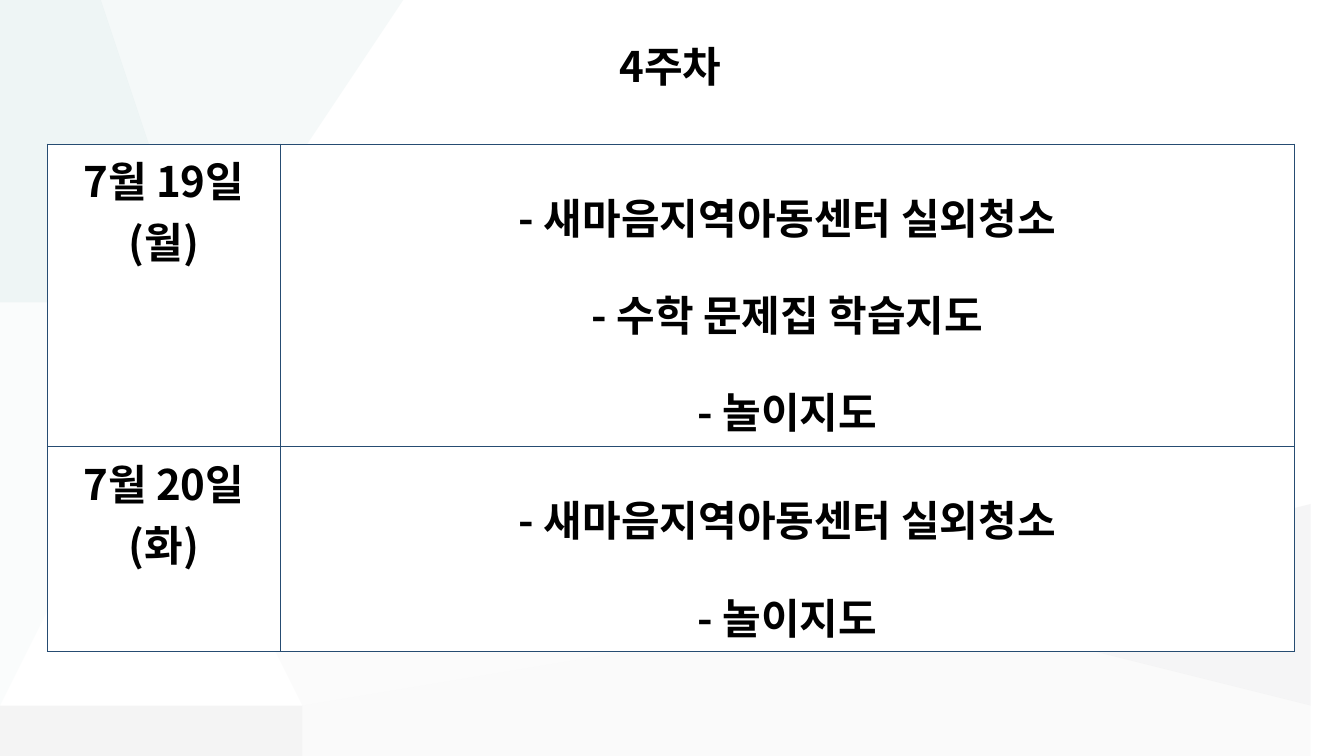
from dataclasses import dataclass

from lxml import etree
from pptx import Presentation
from pptx.dml.color import RGBColor
from pptx.enum.text import MSO_ANCHOR, PP_ALIGN
from pptx.oxml.ns import qn
from pptx.util import Inches, Pt

CENTER = PP_ALIGN.CENTER
MIDDLE = MSO_ANCHOR.MIDDLE


@dataclass(frozen=True)
class Theme:
    font: str = "Noto Sans CJK KR"
    size: float = 30
    ink: str = "000000"
    paper: str = "FFFFFF"
    border: str = "264C72"
    border_width: float = 1
    warm_gray: str = "F3F2F2"
    gray: str = "B6B8BA"
    light_gray: str = "C6C8CA"
    pale_mint: str = "E0EDED"
    mint: str = "C1DBDB"


THEME = Theme()

# Colour, opacity in percent, corners in inches
FACETS = [
    (THEME.warm_gray, 26, [(1.9, 3.44), (2.41, 5.02), (3.04, 6.76), (8.79, 5.85)]),
    (THEME.gray, 15, [(3.04, 6.76), (0, 7.25), (0, 7.5), (3.37, 7.5)]),
    (THEME.pale_mint, 31, [(3.58, 0), (0.62, 0), (1.86, 3.43)]),
    (THEME.light_gray, 17, [(13.33, 5.14), (8.79, 5.85), (13.33, 7.3)]),
    (THEME.gray, 6, [(8.79, 5.85), (3.05, 6.76), (3.37, 7.5), (13.33, 7.5), (13.33, 7.29)]),
    (THEME.mint, 27, [(0.64, 0), (0, 0), (0, 2.79), (1.87, 3.43)]),
    (THEME.mint, 8, [(0, 2.79), (0, 7.3), (1.87, 3.43)]),
]

# Date, activities, row height in inches
SCHEDULE = [
    ("7월 19일(월)",
     ["- 새마음지역아동센터 실외청소", "- 수학 문제집 학습지도", "- 놀이지도"], 3.0),
    ("7월 20일(화)",
     ["- 새마음지역아동센터 실외청소", "- 놀이지도"], 2.03),
]


def write(frame, lines, size=THEME.size, color=THEME.ink, bold=True,
          align=CENTER, line_spacing=None):
    for index, line in enumerate(lines):
        paragraph = frame.paragraphs[0] if index == 0 else frame.add_paragraph()
        paragraph.alignment = align
        if line_spacing:
            paragraph.line_spacing = line_spacing
        run = paragraph.add_run()
        run.text = line
        run.font.size = Pt(size)
        run.font.bold = bold
        run.font.name = THEME.font
        run.font.color.rgb = RGBColor.from_string(color)
        east_asian = etree.SubElement(run.font._element, qn("a:ea"))
        east_asian.set("typeface", THEME.font)


def draw_background(slide, left, top):
    for color, opacity, corners in FACETS:
        outline = slide.shapes.build_freeform(*corners[0], scale=Inches(1))
        outline.add_line_segments(corners[1:], close=True)
        facet = outline.convert_to_shape(Inches(left), Inches(top))
        facet.shadow.inherit = False
        facet.line.fill.background()
        facet.fill.solid()
        facet.fill.fore_color.rgb = RGBColor.from_string(color)
        tint = facet._element.spPr.find(qn("a:solidFill"))[0]
        etree.SubElement(tint, qn("a:alpha")).set("val", str(opacity * 1000))


def add_title(slide, title, left, top, width, height):
    heading = slide.shapes.add_textbox(
        Inches(left), Inches(top), Inches(width), Inches(height))
    heading.text_frame.word_wrap = True
    heading.text_frame.vertical_anchor = MIDDLE
    write(heading.text_frame, [title])


def style_cell(cell):
    properties = cell._tc.get_or_add_tcPr()
    for side in ("lnL", "lnR", "lnT", "lnB"):
        edge = etree.SubElement(properties, qn(f"a:{side}"))
        edge.set("w", str(Pt(THEME.border_width)))
        fill = etree.SubElement(edge, qn("a:solidFill"))
        etree.SubElement(fill, qn("a:srgbClr")).set("val", THEME.border)
    cell.fill.solid()
    cell.fill.fore_color.rgb = RGBColor.from_string(THEME.paper)


def add_schedule(slide, left, top, width, date_width):
    height = sum(row_height for _, _, row_height in SCHEDULE)
    table = slide.shapes.add_table(
        len(SCHEDULE), 2, Inches(left), Inches(top),
        Inches(width), Inches(height)).table
    table.first_row = False
    table.horz_banding = False
    table.columns[0].width = Inches(date_width)
    table.columns[1].width = Inches(width - date_width)
    for index, (date, activities, row_height) in enumerate(SCHEDULE):
        table.rows[index].height = Inches(row_height)
        date_cell, activity_cell = table.rows[index].cells
        write(date_cell.text_frame, [date])
        write(activity_cell.text_frame, activities, line_spacing=1.6)
        style_cell(date_cell)
        style_cell(activity_cell)


def main():
    presentation = Presentation()
    presentation.slide_width = Inches(13.33)
    presentation.slide_height = Inches(7.5)
    slide = presentation.slides.add_slide(presentation.slide_layouts[6])
    slide.background.fill.solid()
    slide.background.fill.fore_color.rgb = RGBColor.from_string(THEME.paper)
    draw_background(slide, 0, 0)
    add_title(slide, "4주차", 0.47, 0.14, 12.36, 1.03)
    add_schedule(slide, 0.47, 1.43, 12.37, 2.31)
    presentation.save("out.pptx")


if __name__ == "__main__":
    main()
